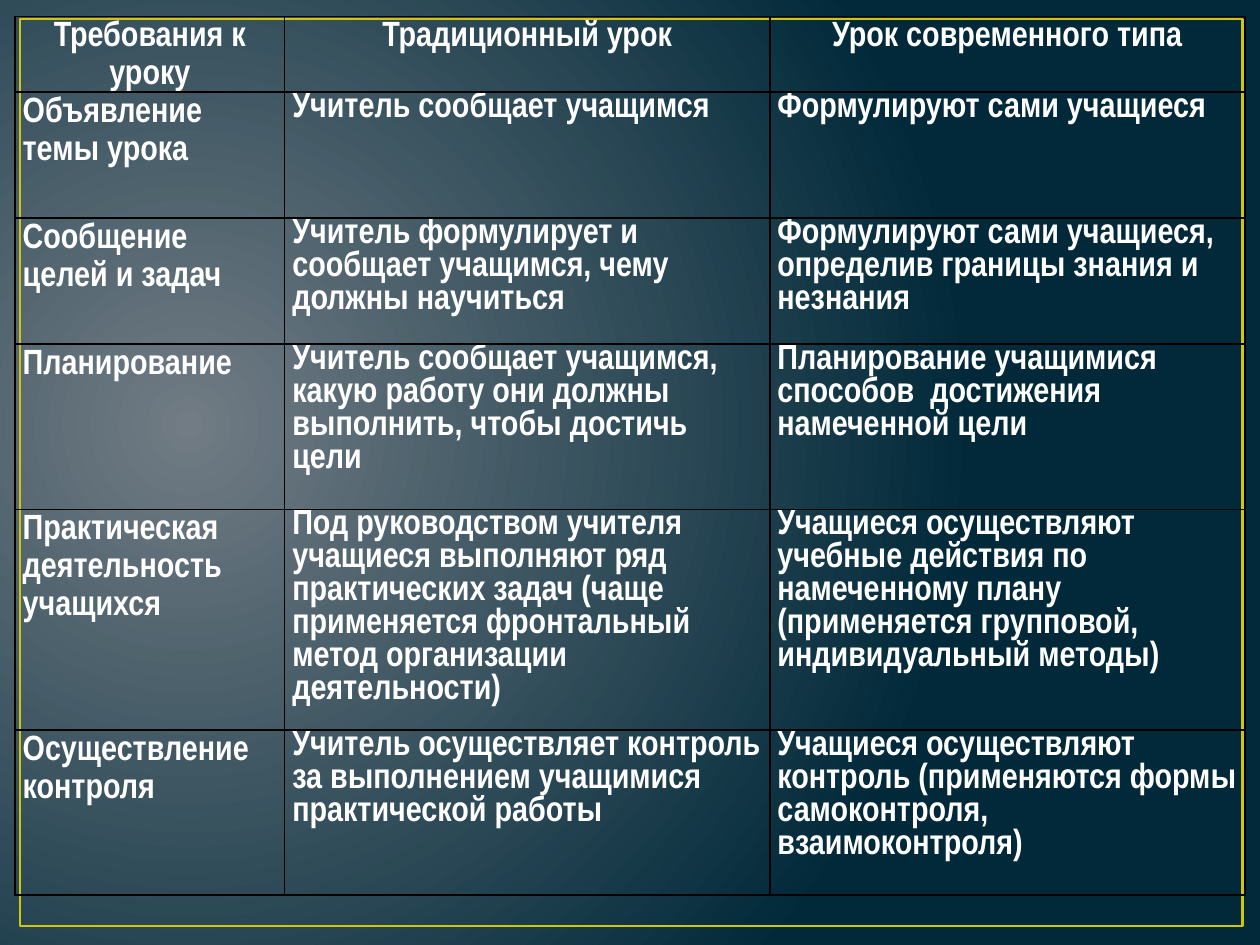
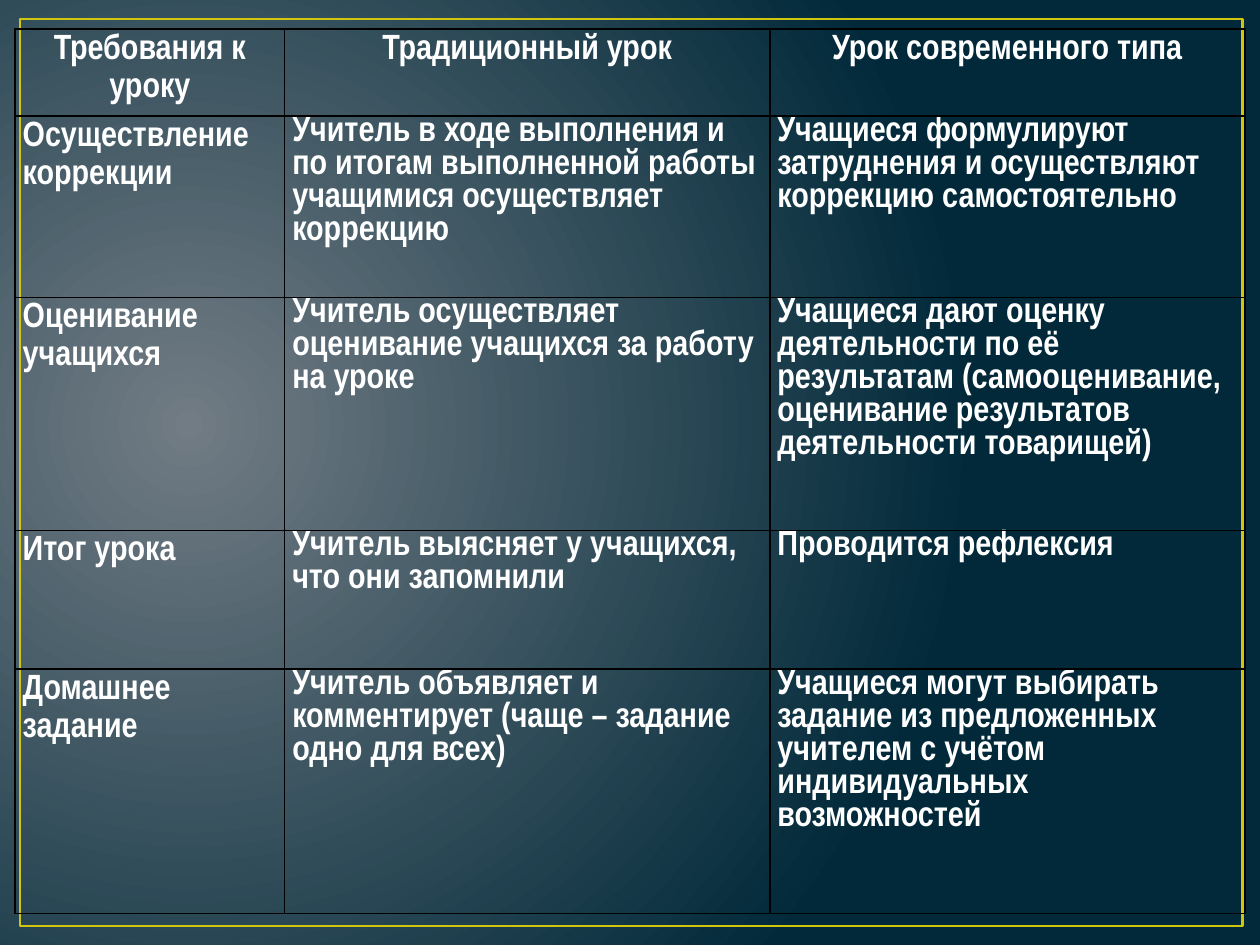
from lxml import etree
from pptx import Presentation
from pptx.dml.color import RGBColor
from pptx.enum.shapes import MSO_SHAPE
from pptx.enum.text import PP_ALIGN
from pptx.oxml.ns import qn
from pptx.util import Inches, Pt

RECT = MSO_SHAPE.RECTANGLE
LEFT = PP_ALIGN.LEFT
CENTER = PP_ALIGN.CENTER

THEME = {
    "font": "Arial Narrow",
    "size": Pt(20),
    "after": Pt(10),
    "text": RGBColor(0xFF, 0xFF, 0xFF),
    "frame": RGBColor(0xCF, 0xC6, 0x0D),
    "glow": RGBColor(0x71, 0x7C, 0x84),
    "night": RGBColor(0x01, 0x29, 0x3A),
    "grid": "000000",
}

HEAD = ("Требования к уроку", "Традиционный урок", "Урок современного типа")
COLS = (2.14, 3.85, 3.77)

PAGES = [
    {
        "top": 0.13,
        "rows": (0.55, 1, 1, 1.31, 1.75, 1.31),
        "body": [
            ("Объявление темы урока",
             "Учитель сообщает учащимся",
             "Формулируют сами учащиеся"),
            ("Сообщение целей и задач",
             "Учитель формулирует и сообщает учащимся, чему должны научиться",
             "Формулируют сами учащиеся, определив границы знания и незнания"),
            ("Планирование",
             "Учитель сообщает учащимся, какую работу они должны выполнить, "
             "чтобы достичь цели",
             "Планирование учащимися способов  достижения намеченной цели"),
            ("Практическая деятельность учащихся",
             "Под руководством учителя учащиеся выполняют ряд практических задач "
             "(чаще применяется фронтальный метод организации деятельности)",
             "Учащиеся осуществляют учебные действия по намеченному плану "
             "(применяется групповой, индивидуальный методы)"),
            ("Осуществление контроля",
             "Учитель осуществляет контроль за выполнением учащимися "
             "практической работы",
             "Учащиеся осуществляют контроль (применяются формы самоконтроля, "
             "взаимоконтроля)"),
        ],
    },
    {
        "top": 0.23,
        "rows": (0.69, 1.44, 1.85, 1.1, 1.94),
        "body": [
            ("Осуществление коррекции",
             "Учитель в ходе выполнения и по итогам выполненной работы "
             "учащимися осуществляет коррекцию",
             "Учащиеся формулируют затруднения и осуществляют коррекцию "
             "самостоятельно"),
            ("Оценивание учащихся",
             "Учитель осуществляет оценивание учащихся за работу на уроке",
             "Учащиеся дают оценку деятельности по её результатам "
             "(самооценивание, оценивание результатов деятельности товарищей)"),
            ("Итог урока",
             "Учитель выясняет у учащихся, что они запомнили",
             "Проводится рефлексия"),
            ("Домашнее задание",
             "Учитель объявляет и комментирует (чаще – задание одно для всех)",
             "Учащиеся могут выбирать задание из предложенных учителем с учётом "
             "индивидуальных возможностей"),
        ],
    },
]


def write(cell, text, align=LEFT, space=1.0):
    cell.margin_left = cell.margin_right = Inches(0.06)
    cell.margin_top = cell.margin_bottom = 0
    para = cell.text_frame.paragraphs[0]
    para.alignment = align
    para.line_spacing = space
    para.space_after = THEME["after"]
    run = para.add_run()
    run.text = text
    run.font.name = THEME["font"]
    run.font.size = THEME["size"]
    run.font.bold = True
    run.font.color.rgb = THEME["text"]


def rule(cell):
    props = cell._tc.get_or_add_tcPr()
    for side in ("lnL", "lnR", "lnT", "lnB"):
        line = etree.SubElement(props, qn(f"a:{side}"), w=str(Pt(1)))
        fill = etree.SubElement(line, qn("a:solidFill"))
        etree.SubElement(fill, qn("a:srgbClr"), val=THEME["grid"])
    cell.fill.background()


prs = Presentation()
prs.slide_width = Inches(10)
prs.slide_height = Inches(7.5)

back = prs.slide_master.background.fill
back.gradient()
for stop, name in zip(back.gradient_stops, ("glow", "night")):
    stop.color.rgb = THEME[name]
grad = prs.slide_master.element.find(".//" + qn("a:gradFill"))
grad.remove(grad.find(qn("a:lin")))
round_ = etree.SubElement(grad, qn("a:path"), path="circle")
etree.SubElement(round_, qn("a:fillToRect"), l="15000", t="50000", r="85000", b="60000")

for page in PAGES:
    slide = prs.slides.add_slide(prs.slide_layouts[6])
    frame = slide.shapes.add_shape(RECT, Inches(0.16), Inches(0.15), Inches(9.7), Inches(7.2))
    frame.shadow.inherit = False
    frame.fill.background()
    frame.line.color.rgb = THEME["frame"]
    frame.line.width = Pt(1.5)

    rows = page["rows"]
    table = slide.shapes.add_table(
        len(rows), len(COLS), Inches(0.12), Inches(page["top"]),
        Inches(sum(COLS)), Inches(sum(rows))).table
    table.first_row = False
    table.horz_banding = False
    for col, width in zip(table.columns, COLS):
        col.width = Inches(width)
    for row, height in zip(table.rows, rows):
        row.height = Inches(height)

    for r, texts in enumerate([HEAD] + page["body"]):
        for c, text in enumerate(texts):
            cell = table.cell(r, c)
            rule(cell)
            write(cell, text,
                  align=CENTER if r == 0 else LEFT,
                  space=1.15 if r == 0 or c == 0 else 1.0)

prs.save("out.pptx")
